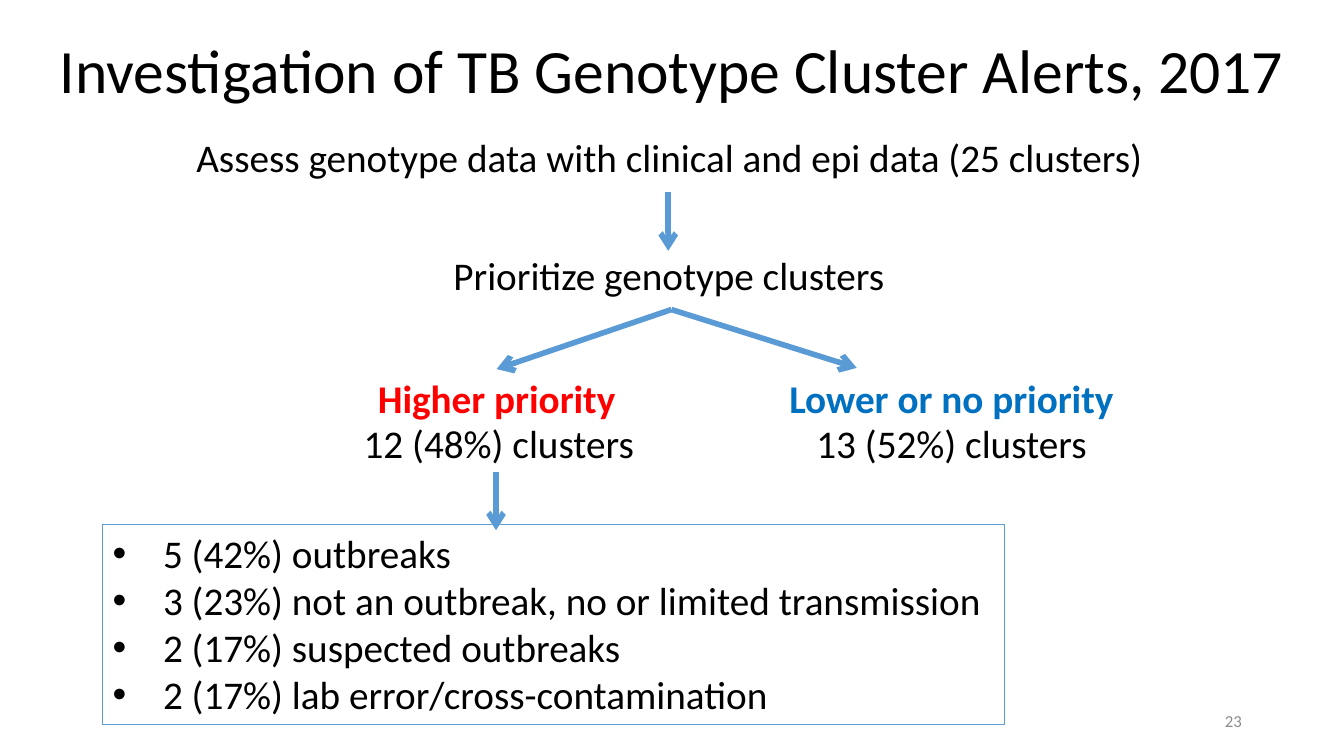
from lxml.etree import SubElement
from pptx import Presentation
from pptx.dml.color import RGBColor
from pptx.enum.shapes import MSO_CONNECTOR, MSO_SHAPE
from pptx.enum.text import MSO_ANCHOR, PP_ALIGN
from pptx.oxml.ns import qn
from pptx.util import Cm, Pt


def paint(code):
    return RGBColor.from_string(code)


def assign(target, values):
    for name, value in values.items():
        setattr(target, name, value)


class Deck:
    face = "Calibri"
    black, blue = "000000", "5B9BD5"
    indent = Cm(1.27)

    def __init__(self):
        self.show = Presentation()
        assign(self.show, {"slide_width": Cm(33.87), "slide_height": Cm(19.05)})
        self.slide = self.show.slides.add_slide(self.show.slide_layouts[6])

    def fill(self, frame, lines, size=28, color=black, align=PP_ALIGN.CENTER,
             anchor=MSO_ANCHOR.TOP, bold=False, wrap=True, space=1.0):
        assign(frame, {"word_wrap": wrap, "vertical_anchor": anchor})
        for i, line in enumerate(lines):
            para = frame.paragraphs[0] if i == 0 else frame.add_paragraph()
            assign(para, {"alignment": align, "line_spacing": space})
            run = para.add_run()
            run.text = line
            assign(run.font, {"name": self.face, "size": Pt(size), "bold": bold})
            run.font.color.rgb = paint(color)

    def text(self, words, place, **style):
        box = self.slide.shapes.add_textbox(*map(Cm, place))
        self.fill(box.text_frame, [words], **style)
        return box

    def panel(self, lines, place):
        box = self.slide.shapes.add_shape(MSO_SHAPE.RECTANGLE, *map(Cm, place))
        box.shadow.inherit = False
        box.fill.background()
        box.line.color.rgb = paint(self.blue)
        box.line.width = Pt(0.75)
        self.fill(box.text_frame, lines, align=PP_ALIGN.LEFT)
        for para in box.text_frame.paragraphs:
            props = para._p.get_or_add_pPr()
            props.set("marL", str(self.indent))
            props.set("indent", str(-self.indent))
            SubElement(props, qn("a:buFont")).set("typeface", "Arial")
            SubElement(props, qn("a:buChar")).set("char", "•")

    def arrow(self, start, end, goal=None):
        line = self.slide.shapes.add_connector(
            MSO_CONNECTOR.STRAIGHT, *map(Cm, start + end))
        line.line.color.rgb = paint(self.blue)
        line.line.width = Pt(4)
        SubElement(line.line._get_or_add_ln(), qn("a:tailEnd")).set("type", "arrow")
        SubElement(line._element.spPr, qn("a:effectLst"))
        if goal is not None:
            line.end_connect(goal, 0)


def main():
    deck = Deck()
    deck.text("Investigation of TB Genotype Cluster Alerts, 2017",
              (1.19, 0.58, 31.52, 2.54), size=44, anchor=MSO_ANCHOR.MIDDLE, space=0.9)
    deck.text("Assess genotype data with clinical and epi data (25 clusters)",
              (3.86, 3.23, 26.01, 1.45))
    deck.text("Prioritize genotype clusters", (10.77, 6.22, 12.17, 1.45))
    high = deck.text("Higher priority", (6.15, 9.3, 12.73, 1.45),
                     color="FF0000", bold=True)
    deck.text("Lower or no priority", (19.58, 9.3, 8.79, 1.45),
              color="0070C0", bold=True)
    for count, left in (("12 (48%) clusters", 8.86), ("13 (52%) clusters", 20.27)):
        deck.text(count, (left, 10.44, 7.42, 1.45), wrap=False)
    deck.panel(["5 (42%) outbreaks",
                "3 (23%) not an outbreak, no or limited transmission",
                "2 (17%) suspected outbreaks",
                "2 (17%) lab error/cross-contamination"],
               (2.59, 13.21, 22.73, 5.05))

    fork = (16.92, 7.8)
    deck.arrow((16.84, 4.85), (16.84, 6.32))
    deck.arrow(fork, (12.5, 9.3), high)
    deck.arrow(fork, (21.59, 9.27))
    deck.arrow((12.5, 11.89), (12.5, 13.36))
    deck.text("23", (23.93, 17.65, 7.62, 1.02), size=12, color="8C8C8C",
              align=PP_ALIGN.RIGHT, anchor=MSO_ANCHOR.MIDDLE)
    deck.show.save("out.pptx")


if __name__ == "__main__":
    main()
